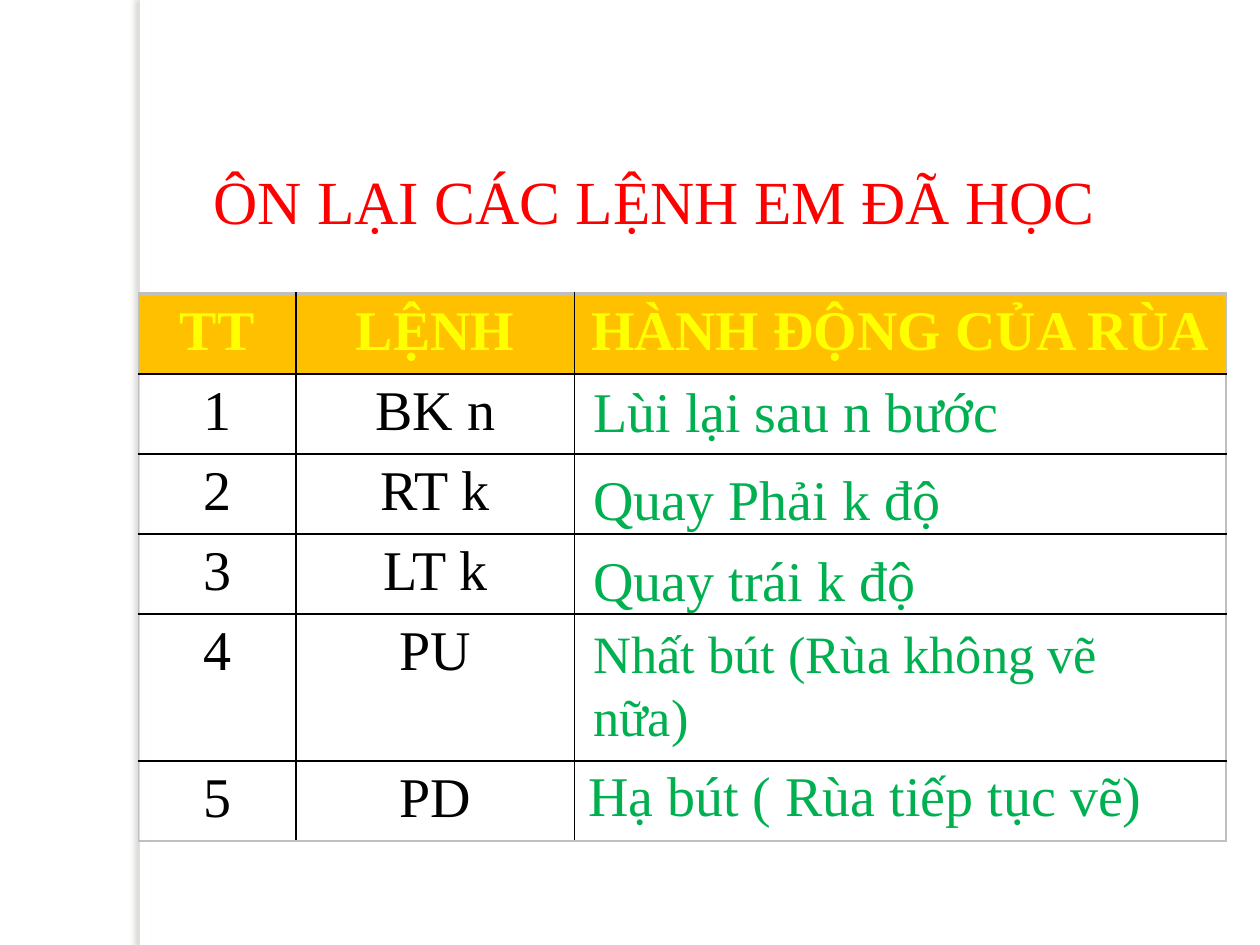
"""Build a slide that reviews turtle commands in a table."""
from dataclasses import dataclass

from lxml.etree import SubElement
from pptx import Presentation
from pptx.dml.color import RGBColor
from pptx.enum.shapes import MSO_SHAPE
from pptx.enum.text import MSO_AUTO_SIZE, PP_ALIGN
from pptx.oxml import parse_xml
from pptx.oxml.ns import nsdecls, qn
from pptx.util import Pt


@dataclass(frozen=True)
class Theme:
    font: str = "Times New Roman"
    title: str = "FF0000"
    head: str = "FFFF00"
    band: str = "FFC000"
    body: str = "000000"
    note: str = "00B050"
    paper: str = "FFFFFF"
    shade: str = "736F63"
    edge: str = "BFBFBF"
    big: int = 35
    mid: int = 32
    small: int = 30


THEME = Theme()
COLS = (90, 159, 372.5)
ROWS = (45.7, 45.7, 45.7, 45.7, 84, 45.7)
CELLS = (
    ("TT", "LỆNH", "HÀNH ĐỘNG CỦA RÙA"),
    ("1", "BK n", ""),
    ("2", "RT k", ""),
    ("3", "LT k", ""),
    ("4", "PU", ""),
    ("5", "PD", ""),
)
NOTES = (
    ("Lùi lại sau n bước", 332, 211.7, 349, 46, THEME.mid),
    ("Quay Phải k độ", 332, 262, 341, 46, THEME.mid),
    ("Quay trái k độ", 332, 308, 338, 46, THEME.mid),
    ("Nhất bút (Rùa không vẽ nữa)", 332, 351.4, 354, 80, THEME.small),
    ("Hạ bút ( Rùa tiếp tục vẽ)", 329, 431.3, 343, 46, THEME.mid),
)


def style(para, size, color, bold=False, align=PP_ALIGN.LEFT):
    para.alignment = align
    for run in para.runs:
        font = run.font
        font.name, font.size, font.bold = THEME.font, Pt(size), bold
        font.color.rgb = RGBColor.from_string(color)


def add_text(slide, text, left, top, width, height, size, color=THEME.note, align=PP_ALIGN.LEFT):
    box = slide.shapes.add_textbox(Pt(left), Pt(top), Pt(width), Pt(height))
    frame = box.text_frame
    frame.word_wrap = True
    frame.auto_size = MSO_AUTO_SIZE.SHAPE_TO_FIT_TEXT
    frame.text = text
    style(frame.paragraphs[0], size, color, align=align)


def add_strip(slide):
    strip = slide.shapes.add_shape(MSO_SHAPE.RECTANGLE, Pt(80), 0, Pt(6), Pt(540))
    strip.fill.solid()
    strip.fill.fore_color.rgb = RGBColor.from_string(THEME.paper)
    strip.line.fill.background()
    strip.shadow.inherit = False
    glow = strip._element.spPr.find(qn("a:effectLst"))
    glow.append(parse_xml(
        f'<a:outerShdw {nsdecls("a")} blurRad="{Pt(3)}" dist="{Pt(3)}" dir="10800000">'
        f'<a:srgbClr val="{THEME.shade}"><a:alpha val="25000"/></a:srgbClr></a:outerShdw>'))


def add_edge(cell, side, color, width):
    line = SubElement(cell._tc.get_or_add_tcPr(), qn(f"a:ln{side}"), w=str(Pt(width)))
    fill = SubElement(line, qn("a:solidFill"))
    SubElement(fill, qn("a:srgbClr"), val=color)


def set_edges(cell, row, col):
    outer = {"L": col == 0, "R": col == len(COLS) - 1,
             "T": row == 0, "B": row == len(ROWS) - 1}
    for side, rim in outer.items():
        rule = (side, row) in (("B", 0), ("T", 1))
        width = 2 if side == "T" and rim else 1.5 if rule else 1
        add_edge(cell, side, THEME.edge if rim else THEME.body, width)


def set_cell(cell, text, row, col):
    head = row == 0
    set_edges(cell, row, col)
    if head:
        cell.fill.solid()
        cell.fill.fore_color.rgb = RGBColor.from_string(THEME.band)
    else:
        cell.fill.background()
    if text:
        cell.text_frame.text = text
        style(cell.text_frame.paragraphs[0], THEME.mid,
              THEME.head if head else THEME.body, head, PP_ALIGN.CENTER)


def add_grid(slide):
    frame = slide.shapes.add_table(len(ROWS), len(COLS), Pt(79.2), Pt(168),
                                   Pt(sum(COLS)), Pt(sum(ROWS)))
    table = frame.table
    table.horz_banding = False
    for col, width in zip(table.columns, COLS):
        col.width = Pt(width)
    for row, height in zip(table.rows, ROWS):
        row.height = Pt(height)
    for row, texts in enumerate(CELLS):
        for col, text in enumerate(texts):
            set_cell(table.cell(row, col), text, row, col)


def main():
    deck = Presentation()
    deck.slide_width, deck.slide_height = Pt(720), Pt(540)
    slide = deck.slides.add_slide(deck.slide_layouts[6])
    add_strip(slide)
    add_grid(slide)
    for note in NOTES:
        add_text(slide, *note)
    add_text(slide, "ÔN LẠI CÁC LỆNH EM ĐÃ HỌC", 84, 90, 580, 50,
             THEME.big, THEME.title, PP_ALIGN.CENTER)
    deck.save("out.pptx")


if __name__ == "__main__":
    main()
